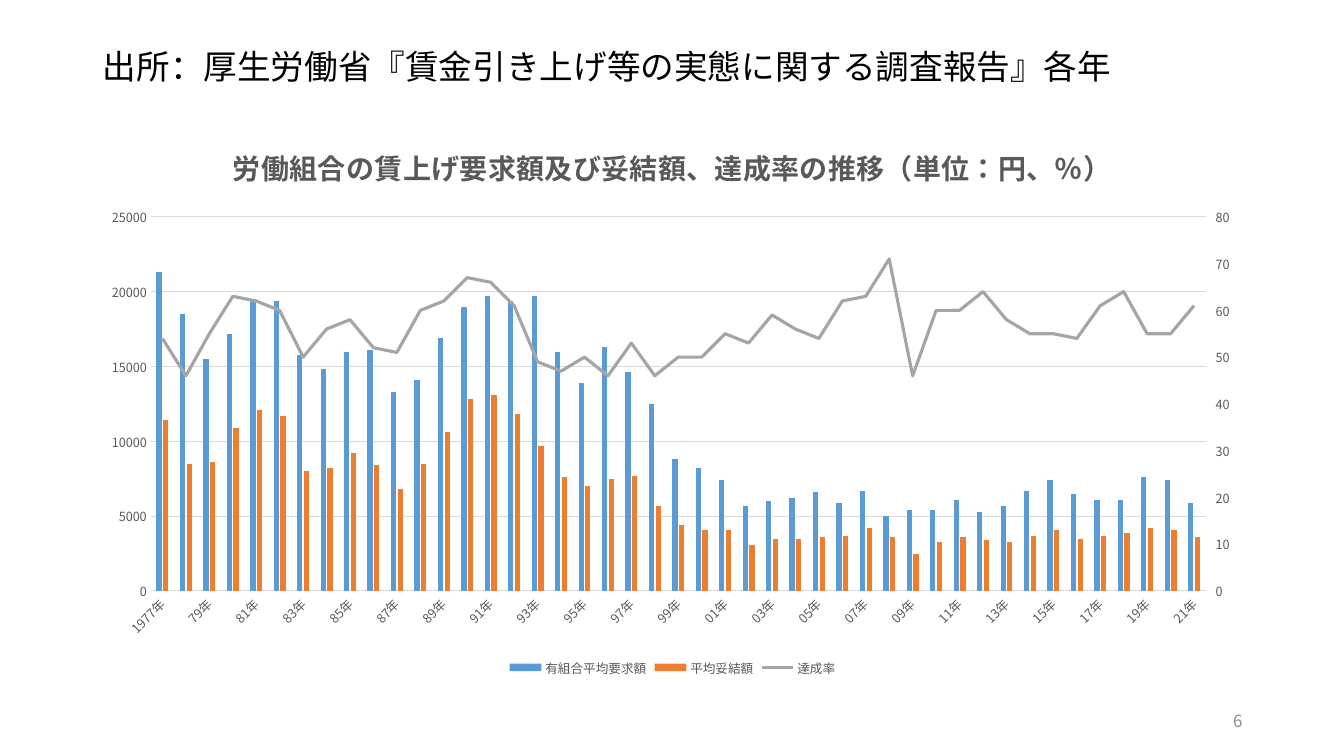
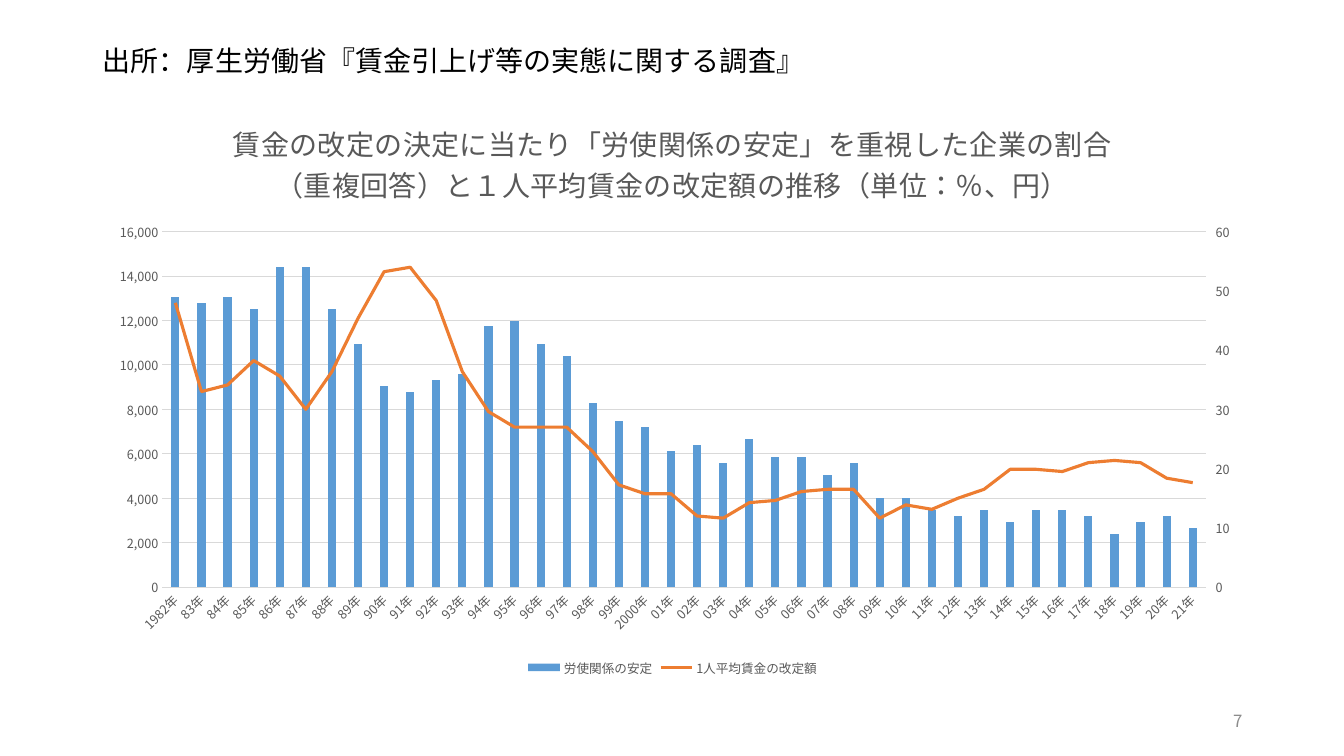
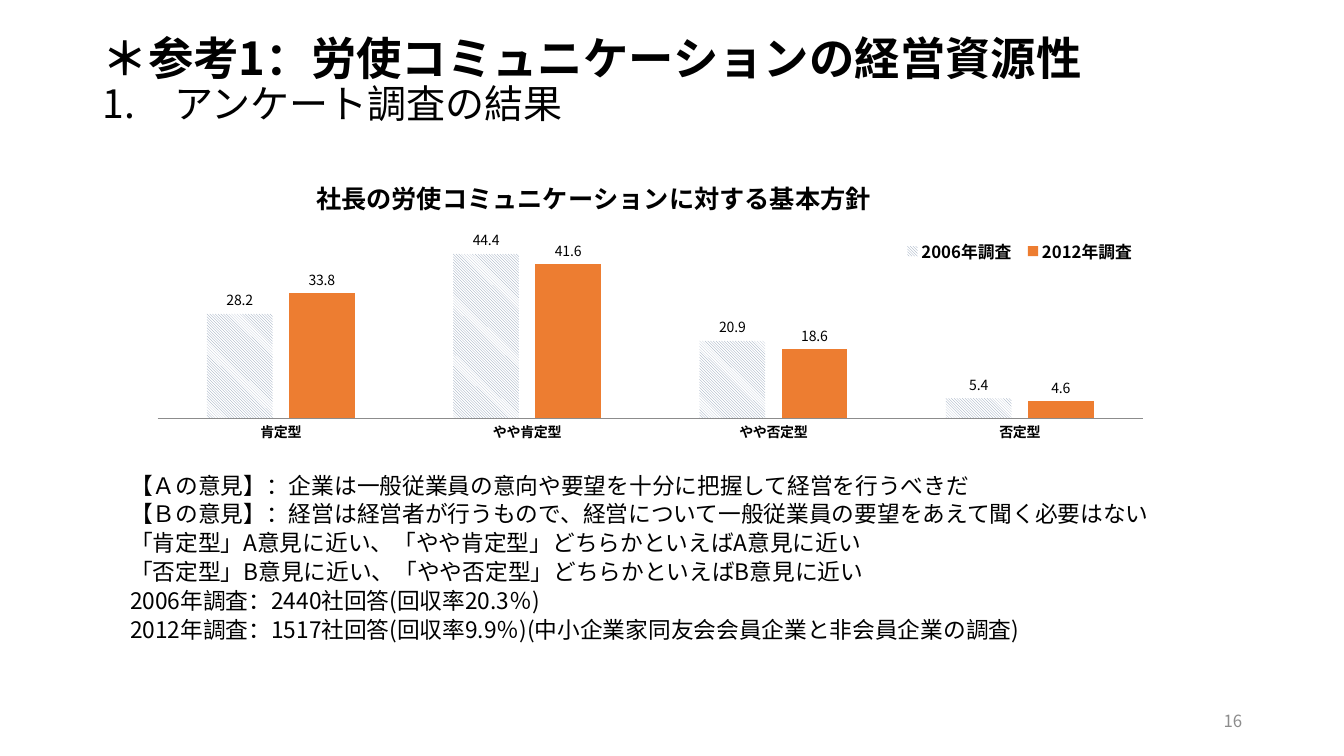
from copy import deepcopy

from pptx import Presentation
from pptx.chart.axis import ValueAxis
from pptx.chart.data import CategoryChartData
from pptx.dml.color import RGBColor
from pptx.enum.chart import XL_CHART_TYPE as ChartType
from pptx.enum.chart import XL_LABEL_POSITION as LabelPosition
from pptx.enum.chart import XL_LEGEND_POSITION as LegendPosition
from pptx.enum.chart import XL_MARKER_STYLE as MarkerStyle
from pptx.enum.chart import XL_TICK_MARK as TickMark
from pptx.enum.dml import MSO_PATTERN as Pattern
from pptx.enum.text import MSO_ANCHOR as Anchor
from pptx.enum.text import MSO_AUTO_SIZE as AutoSize
from pptx.enum.text import PP_ALIGN as Align
from pptx.oxml import parse_xml
from pptx.oxml.ns import nsdecls, qn
from pptx.util import Inches, Pt

FONT = "Noto Sans CJK JP"
BLACK = RGBColor(0x00, 0x00, 0x00)
WHITE = RGBColor(0xFF, 0xFF, 0xFF)
DARK_GRAY = RGBColor(0x59, 0x59, 0x59)
MID_GRAY = RGBColor(0x8C, 0x8C, 0x8C)
GRID_GRAY = RGBColor(0xD9, 0xD9, 0xD9)
RATE_GRAY = RGBColor(0xA5, 0xA5, 0xA5)
BLUE = RGBColor(0x5B, 0x9B, 0xD5)
ORANGE = RGBColor(0xED, 0x7D, 0x31)
SLATE = RGBColor(0x84, 0x97, 0xB0)

TITLE_ONLY, TITLE_AND_BODY = 5, 1
LEFT_AXES = ("1001", "1002")
RIGHT_AXES = ("1003", "1004")

DEMANDS = [
    21300, 18500, 15500, 17200, 19400, 19400, 15800, 14800, 16000, 16100, 13300, 14100,
    16900, 19000, 19700, 19400, 19700, 16000, 13900, 16300, 14600, 12500, 8800, 8200,
    7400, 5700, 6000, 6200, 6600, 5900, 6700, 5000, 5400, 5400, 6100, 5300, 5700, 6700,
    7400, 6500, 6100, 6100, 7600, 7400, 5900]
SETTLEMENTS = [
    11400, 8500, 8600, 10900, 12100, 11700, 8000, 8200, 9200, 8400, 6800, 8500, 10600,
    12800, 13100, 11800, 9700, 7600, 7000, 7500, 7700, 5700, 4400, 4100, 4100, 3100,
    3500, 3500, 3600, 3700, 4200, 3600, 2500, 3300, 3600, 3400, 3300, 3700, 4100, 3500,
    3700, 3900, 4200, 4100, 3600]
ACHIEVEMENT_RATES = [
    54, 46, 55, 63, 62, 60, 50, 56, 58, 52, 51, 60, 62, 67, 66, 61, 49, 47, 50, 46, 53,
    46, 50, 50, 55, 53, 59, 56, 54, 62, 63, 71, 46, 60, 60, 64, 58, 55, 55, 54, 61, 64,
    55, 55, 61]
STABILITY_SHARES = [
    49, 48, 49, 47, 54, 54, 47, 41, 34, 33, 35, 36, 44, 45, 41, 39, 31, 28, 27, 23, 24,
    21, 25, 22, 22, 19, 21, 15, 15, 13, 12, 13, 11, 13, 13, 12, 9, 11, 12, 10]
WAGE_REVISIONS = [
    12800, 8800, 9100, 10200, 9500, 8000, 9700, 12100, 14200, 14400, 12900, 9700, 7900,
    7200, 7200, 7200, 6100, 4600, 4200, 4200, 3200, 3100, 3800, 3900, 4300, 4400, 4400,
    3100, 3700, 3500, 4000, 4400, 5300, 5300, 5200, 5600, 5700, 5600, 4900, 4700]
OPINIONS = [
    "【Ａの意見】：企業は一般従業員の意向や要望を十分に把握して経営を行うべきだ",
    "【Ｂの意見】：経営は経営者が行うもので、経営について一般従業員の要望をあえて聞く必要はない",
    "「肯定型」A意見に近い、「やや肯定型」どちらかといえばA意見に近い",
    "「否定型」B意見に近い、「やや否定型」どちらかといえばB意見に近い",
    "2006年調査：2440社回答(回収率20.3％)",
    "2012年調査：1517社回答(回収率9.9％)(中小企業家同友会会員企業と非会員企業の調査)",
]


def year_labels(first):
    full_years = (1977, 1982, 2000)
    return [f"{year}年" if year in full_years else f"{year % 100:02d}年"
            for year in range(first, 2022)]


def style_font(font, size, color, bold=False):
    font.size = Pt(size)
    font.bold = bold
    font.color.rgb = color
    font.name = FONT
    east_asian = parse_xml(f'<a:ea {nsdecls("a")} typeface="{FONT}"/>')
    font._rPr.find(qn("a:latin")).addnext(east_asian)


def add_run(paragraph, text, size, color=BLACK, bold=False):
    run = paragraph.add_run()
    run.text = text
    style_font(run.font, size, color, bold)


def move(shape, box):
    shape.left, shape.top, shape.width, shape.height = (Inches(v) for v in box)


def add_slide(prs, layout, number, title_height, title_lines):
    slide = prs.slides.add_slide(prs.slide_layouts[layout])
    title = slide.shapes.title
    move(title, (0.92, 0.4, 11.5, title_height))
    frame = title.text_frame
    frame.auto_size = AutoSize.NONE
    frame.vertical_anchor = Anchor.MIDDLE
    for index, (text, size, bold) in enumerate(title_lines):
        line = frame.add_paragraph() if index else frame.paragraphs[0]
        line.alignment = Align.LEFT
        line.line_spacing = 0.9
        line.space_before = Pt(0)
        add_run(line, text, size, bold=bold)

    page = slide.shapes.add_textbox(
        Inches(9.42), Inches(6.95), Inches(3), Inches(0.4)).text_frame
    page.word_wrap = True
    page.vertical_anchor = Anchor.MIDDLE
    page.paragraphs[0].alignment = Align.RIGHT
    add_run(page.paragraphs[0], str(number), 12, MID_GRAY)
    return slide


def set_layout(element, index, **edges):
    for old in element.findall(qn("c:layout")):
        element.remove(old)
    target = '<c:layoutTarget val="inner"/>' if element.tag == qn("c:plotArea") else ""
    modes = '<c:xMode val="edge"/><c:yMode val="edge"/>'
    values = "".join(f'<c:{key} val="{value}"/>' for key, value in edges.items())
    element.insert(index, parse_xml(
        f'<c:layout {nsdecls("c")}><c:manualLayout>{target}{modes}{values}'
        '</c:manualLayout></c:layout>'))


def add_column_chart(slide, box, title, categories, series, gap, overlap,
                     size, color, title_size, title_bold):
    data = CategoryChartData()
    data.categories = categories
    for name, values in series:
        data.add_series(name, values)
    chart = slide.shapes.add_chart(
        ChartType.COLUMN_CLUSTERED, *(Inches(v) for v in box), data).chart
    style_font(chart.font, size, color)
    chart.has_title = True
    add_run(chart.chart_title.text_frame.paragraphs[0], title, title_size, color, title_bold)
    chart.has_legend = True
    chart.legend.include_in_layout = False
    columns = chart.plots[0]
    columns.vary_by_categories = False
    columns.gap_width = gap
    columns.overlap = overlap
    return chart


def set_scale(axis, maximum, step):
    axis.minimum_scale = 0
    axis.maximum_scale = maximum
    axis.major_unit = step


def rename_axis(axis, own_id, crossing_id):
    axis.find(qn("c:axId")).set("val", own_id)
    axis.find(qn("c:crossAx")).set("val", crossing_id)


def style_left_axes(chart, scale, number_format):
    years, amounts = chart.category_axis, chart.value_axis
    for axis in (years, amounts):
        axis.major_tick_mark = TickMark.NONE
        style_font(axis.tick_labels.font, 9, DARK_GRAY)
    years.format.line.color.rgb = GRID_GRAY
    years.format.line.width = Pt(0.75)
    years._element.find(qn("c:txPr")).find(qn("a:bodyPr")).set("rot", "-2700000")
    amounts.format.line.fill.background()
    amounts.major_gridlines.format.line.color.rgb = GRID_GRAY
    amounts.major_gridlines.format.line.width = Pt(0.75)
    amounts.tick_labels.number_format = number_format
    amounts.tick_labels.number_format_is_linked = False
    set_scale(amounts, *scale)


def add_right_axes(chart, scale):
    left_years, left_amounts = chart.category_axis._element, chart.value_axis._element
    right_years, right_rates = deepcopy(left_years), deepcopy(left_amounts)
    rename_axis(left_years, *LEFT_AXES)
    rename_axis(left_amounts, *reversed(LEFT_AXES))
    rename_axis(right_years, *RIGHT_AXES)
    rename_axis(right_rates, *reversed(RIGHT_AXES))
    left_amounts.addnext(right_rates)
    right_rates.addnext(right_years)
    right_years.find(qn("c:delete")).set("val", "1")
    right_rates.find(qn("c:axPos")).set("val", "r")
    right_rates.find(qn("c:crosses")).set("val", "max")
    rates = ValueAxis(right_rates)
    rates.has_major_gridlines = False
    rates.major_tick_mark = TickMark.OUTSIDE
    rates.tick_labels.number_format = "General"
    set_scale(rates, *scale)


def turn_last_series_into_line(chart, column_axes, line_axes):
    columns = chart._chartSpace.find(".//" + qn("c:barChart"))
    for axis_id, value in zip(columns.findall(qn("c:axId")), column_axes):
        axis_id.set("val", value)
    line_plot = parse_xml(
        f'<c:lineChart {nsdecls("c")}><c:grouping val="standard"/>'
        '<c:varyColors val="0"/><c:marker val="1"/>'
        + "".join(f'<c:axId val="{value}"/>' for value in line_axes)
        + '</c:lineChart>')
    series = columns.findall(qn("c:ser"))[-1]
    for column_option in series.findall(qn("c:invertIfNegative")):
        series.remove(column_option)
    line_plot.insert(2, series)
    columns.addnext(line_plot)


def add_trend_chart(slide, box, title, title_bold, first_year, series, colors,
                    left_scale, right_scale, number_format, line_on_right, plot_box):
    chart = add_column_chart(slide, box, title, year_labels(first_year), series,
                             219, -27, 9, DARK_GRAY, 20, title_bold)
    chart.legend.position = LegendPosition.BOTTOM
    style_font(chart.legend.font, 9, DARK_GRAY)
    style_left_axes(chart, left_scale, number_format)
    add_right_axes(chart, right_scale)
    axes = (LEFT_AXES, RIGHT_AXES) if line_on_right else (RIGHT_AXES, LEFT_AXES)
    turn_last_series_into_line(chart, *axes)

    columns, lines = chart.plots
    for column, color in zip(columns.series, colors):
        column.format.fill.solid()
        column.format.fill.fore_color.rgb = color
    trend = lines.series[0]
    trend.smooth = False
    trend.marker.style = MarkerStyle.NONE
    trend.format.line.color.rgb = colors[-1]
    trend.format.line.width = Pt(2.25)
    x, y, w, h = plot_box
    set_layout(chart._chartSpace.find(".//" + qn("c:plotArea")), 0, x=x, y=y, w=w, h=h)


def add_policy_chart(slide, box):
    chart = add_column_chart(
        slide, box, "社長の労使コミュニケーションに対する基本方針",
        ["肯定型", "やや肯定型", "やや否定型", "否定型"],
        [("2006年調査", [28.2, 44.4, 20.9, 5.4]),
         ("2012年調査", [33.8, 41.6, 18.6, 4.6])],
        150, -25, 10, BLACK, 18, True)
    chart.legend.position = LegendPosition.TOP
    style_font(chart.legend.font, 12, BLACK, True)

    attitudes, shares = chart.category_axis, chart.value_axis
    attitudes.major_tick_mark = TickMark.NONE
    attitudes.format.line.color.rgb = MID_GRAY
    style_font(attitudes.tick_labels.font, 10, BLACK, True)
    set_scale(shares, 50, 10)
    shares.has_major_gridlines = False
    shares.visible = False

    columns = chart.plots[0]
    columns.has_data_labels = True
    labels = columns.data_labels
    labels.show_value = True
    labels.number_format = "0.0"
    labels.number_format_is_linked = False
    labels.position = LabelPosition.OUTSIDE_END
    style_font(labels.font, 10, BLACK)

    earlier, later = (survey.format.fill for survey in columns.series)
    earlier.patterned()
    earlier.pattern = Pattern.LIGHT_DOWNWARD_DIAGONAL
    earlier.fore_color.rgb = SLATE
    earlier.back_color.rgb = WHITE
    later.solid()
    later.fore_color.rgb = ORANGE

    space = chart._chartSpace
    set_layout(space.find(".//" + qn("c:plotArea")), 0, x=0.02, y=0.34, w=0.96, h=0.57)
    set_layout(space.find(".//" + qn("c:title")), 1, x=0.17, y=0.15)
    set_layout(space.find(".//" + qn("c:legend")), 1, x=0.74, y=0.35, w=0.24, h=0.09)


def fill_opinions(body, box):
    move(body, box)
    frame = body.text_frame
    frame.auto_size = AutoSize.NONE
    for index, opinion in enumerate(OPINIONS):
        line = frame.add_paragraph() if index else frame.paragraphs[0]
        line.line_spacing = 0.7
        line.space_before = Pt(0)
        line.space_after = Pt(7)
        properties = line._p.get_or_add_pPr()
        properties.set("marL", "0")
        properties.set("indent", "0")
        properties.append(parse_xml(f'<a:buNone {nsdecls("a")}/>'))
        add_run(line, opinion, 16.2)


def main():
    prs = Presentation()
    prs.slide_width, prs.slide_height = Inches(13.33), Inches(7.5)

    demands = add_slide(prs, TITLE_ONLY, 6, 0.57, [
        ("出所：厚生労働省『賃金引き上げ等の実態に関する調査報告』各年", 24, False)])
    add_trend_chart(
        demands, (0.92, 1.21, 11.5, 5.54),
        "労働組合の賃上げ要求額及び妥結額、達成率の推移（単位：円、％）", True, 1977,
        [("有組合平均要求額", DEMANDS), ("平均妥結額", SETTLEMENTS),
         ("達成率", ACHIEVEMENT_RATES)],
        (BLUE, ORANGE, RATE_GRAY), (25000, 5000), (80, 10), "General", True,
        (0.05, 0.17, 0.91, 0.67))

    stability = add_slide(prs, TITLE_ONLY, 7, 0.44, [
        ("出所：厚生労働省『賃金引上げ等の実態に関する調査』", 20, False)])
    add_trend_chart(
        stability, (0.92, 0.97, 11.5, 5.78),
        "賃金の改定の決定に当たり「労使関係の安定」を重視した企業の割合"
        "（重複回答）と１人平均賃金の改定額の推移（単位：％、円）", False, 1982,
        [("労使関係の安定", STABILITY_SHARES), ("1人平均賃金の改定額", WAGE_REVISIONS)],
        (BLUE, ORANGE), (16000, 2000), (60, 10), "#,##0", False,
        (0.06, 0.23, 0.9, 0.61))

    survey = add_slide(prs, TITLE_AND_BODY, 16, 0.82, [
        ("＊参考1：労使コミュニケーションの経営資源性", 32.4, True),
        ("1.　アンケート調査の結果", 27.9, False)])
    fill_opinions(survey.placeholders[1], (1.19, 4.7, 11.06, 2.1))
    add_policy_chart(survey, (1.36, 1.22, 10.18, 3.22))

    prs.save("out.pptx")


if __name__ == "__main__":
    main()
